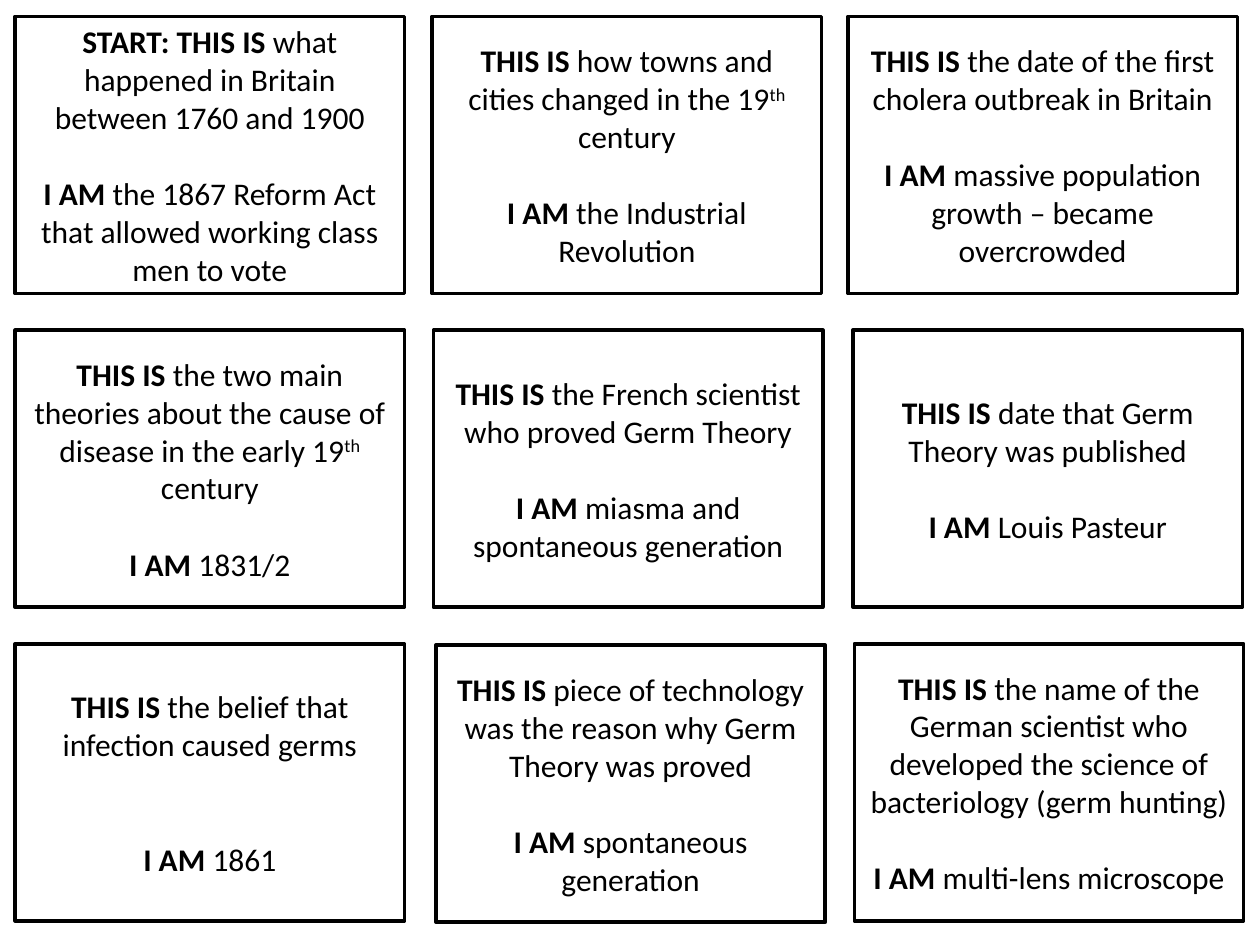
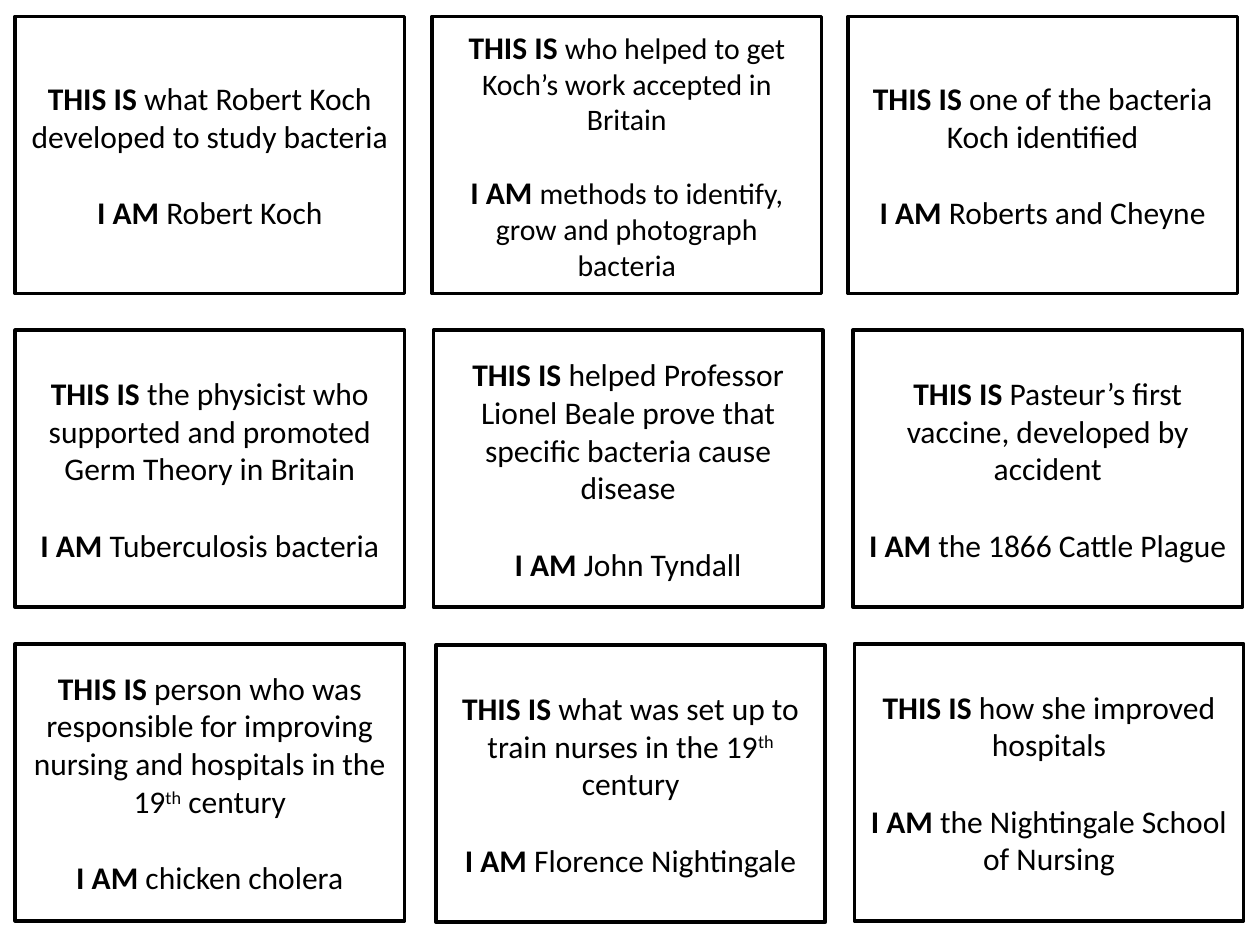
from dataclasses import dataclass

from pptx import Presentation
from pptx.dml.color import RGBColor
from pptx.enum.shapes import MSO_SHAPE
from pptx.enum.text import MSO_ANCHOR, PP_ALIGN
from pptx.util import Inches, Pt


@dataclass(frozen=True)
class Theme:
    ink: RGBColor = RGBColor(0, 0, 0)
    paper: RGBColor = RGBColor(255, 255, 255)
    font: str = "Calibri"
    size: int = 18
    small: int = 17
    border: int = 2
    line_height: float = 1.22


theme = Theme()

# Card grid: left and top of each card, row by row
CARD_W, CARD_H = 3.09, 2.2
CARD_SPOTS = [
    (0.12, 0.13), (3.43, 0.13), (6.73, 0.13),
    (0.12, 2.62), (3.44, 2.62), (6.77, 2.62),
    (0.12, 5.11), (3.46, 5.12), (6.78, 5.11),
]

# Each card: (THIS IS text, I AM text); ^ marks encloses superscript
SLIDES = [
    [
        ("what happened in Britain between 1760 and 1900",
         "the 1867 Reform Act that allowed working class men to vote"),
        ("how towns and cities changed in the 19^th^ century", "the Industrial Revolution"),
        ("the date of the first cholera outbreak in Britain",
         "massive population growth – became overcrowded"),
        ("the two main theories about the cause of disease in the early 19^th^ century",
         "1831/2"),
        ("the French scientist who proved Germ Theory", "miasma and spontaneous generation"),
        ("date that Germ Theory was published", "Louis Pasteur"),
        ("the belief that infection caused germs", "1861"),
        ("piece of technology was the reason why Germ Theory was proved",
         "spontaneous generation"),
        ("the name of the German scientist who developed the science of "
         "bacteriology (germ hunting)", "multi-lens microscope"),
    ],
    [
        ("what Robert Koch developed to study bacteria", "Robert Koch"),
        ("who helped to get Koch’s work accepted in Britain",
         "methods to identify, grow and photograph bacteria"),
        ("one of the bacteria Koch identified", "Roberts and Cheyne"),
        ("the physicist who supported and promoted Germ Theory in Britain",
         "Tuberculosis bacteria"),
        ("helped Professor Lionel Beale prove that specific bacteria cause disease",
         "John Tyndall"),
        ("Pasteur’s first vaccine, developed by accident", "the 1866 Cattle Plague"),
        ("person who was responsible for improving nursing and hospitals in the "
         "19^th^ century", "chicken cholera"),
        ("what was set up to train nurses in the 19^th^ century", "Florence Nightingale"),
        ("how she improved hospitals", "the Nightingale School of Nursing"),
    ],
]

# Cards that differ from the rest, by (slide, card)
START_CARD = (0, 0)
SMALL_CARD = (1, 1)
WIDE_GAP_CARD = (0, 6)


def add_run(p, text, size, bold=False, raised=False):
    r = p.add_run()
    r.text = text
    r.font.name = theme.font
    r.font.size = Pt(size)
    r.font.bold = bold
    r.font.color.rgb = theme.ink
    if raised:
        r._r.get_or_add_rPr().set("baseline", "30000")


def add_line(p, label, text, size):
    p.alignment = PP_ALIGN.CENTER
    add_run(p, label + " ", theme.size, bold=True)
    for i, part in enumerate(text.split("^")):
        add_run(p, part, size, raised=i % 2 == 1)


prs = Presentation()
prs.slide_width, prs.slide_height = Inches(10), Inches(7.5)

for slide_no, cards in enumerate(SLIDES):
    s = prs.slides.add_slide(prs.slide_layouts[6])
    for card_no, ((left, top), (this_is, i_am)) in enumerate(zip(CARD_SPOTS, cards)):
        key = (slide_no, card_no)
        size = theme.small if key == SMALL_CARD else theme.size
        gap_lines = 2 if key == WIDE_GAP_CARD else 1

        # Card frame
        sp = s.shapes.add_shape(MSO_SHAPE.RECTANGLE, Inches(left), Inches(top),
                                Inches(CARD_W), Inches(CARD_H))
        sp.shadow.inherit = False
        sp.fill.solid()
        sp.fill.fore_color.rgb = theme.paper
        sp.line.color.rgb = theme.ink
        sp.line.width = Pt(theme.border)

        # Question for another card, then this card's own answer
        tf = sp.text_frame
        tf.word_wrap = True
        tf.vertical_anchor = MSO_ANCHOR.MIDDLE
        label = "START: THIS IS" if key == START_CARD else "THIS IS"
        add_line(tf.paragraphs[0], label, this_is, size)
        p = tf.add_paragraph()
        p.space_before = Pt(round(gap_lines * size * theme.line_height, 1))
        add_line(p, "I AM", i_am, size)

prs.save("out.pptx")
